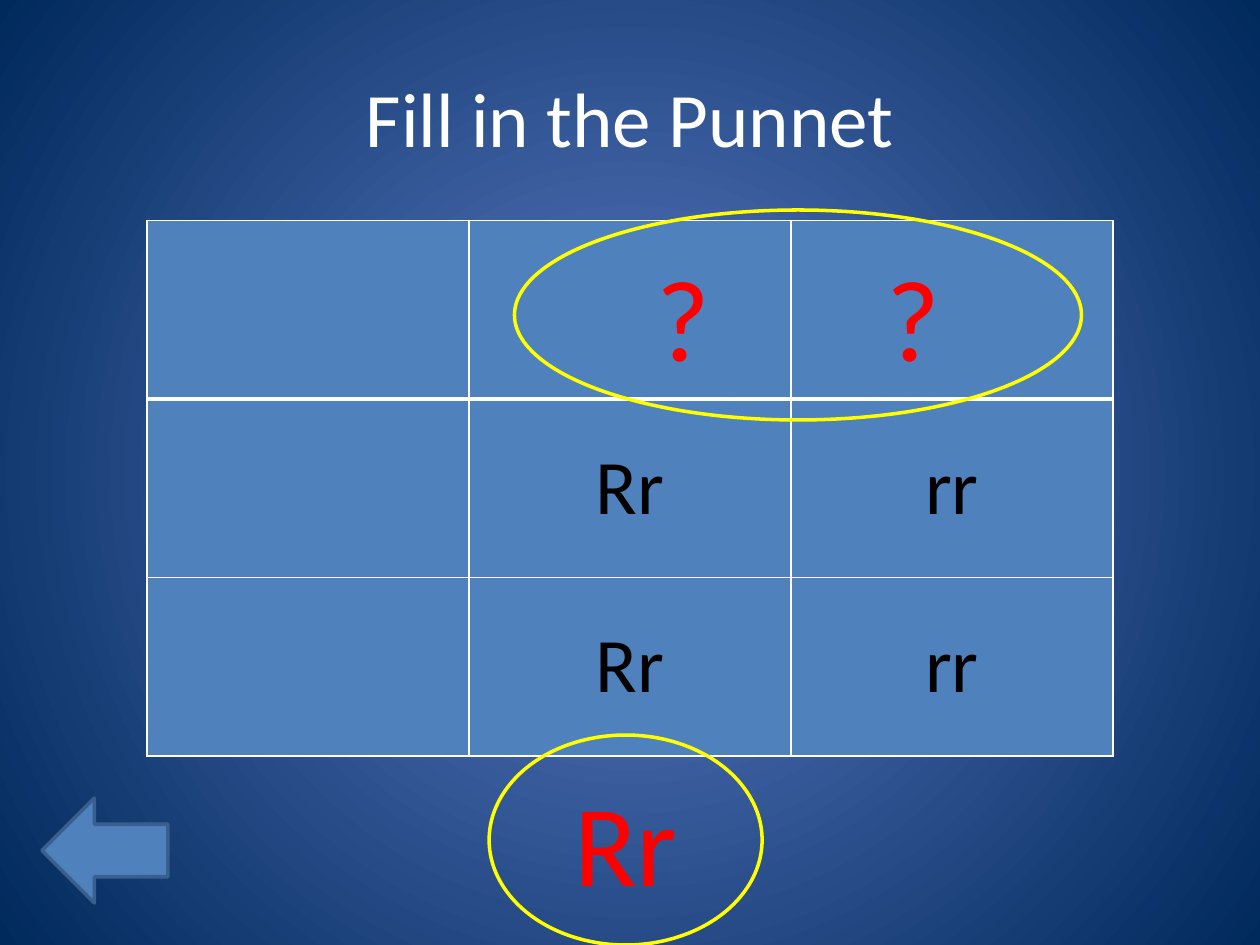
from dataclasses import dataclass

from lxml import etree
from pptx import Presentation
from pptx.dml.color import RGBColor
from pptx.enum.shapes import MSO_SHAPE as Shape
from pptx.enum.text import MSO_ANCHOR as Anchor, PP_ALIGN as Align
from pptx.oxml.ns import qn
from pptx.slide import Slide
from pptx.util import Pt

COLORS = {
    "glow": "5E7CC5",
    "edge": "00295C",
    "fill": "4F81BD",
    "arrow_line": "3A5F8C",
    "grid": "FFFFFF",
    "title": "FFFFFF",
    "genotype": "000000",
    "ring": "FFFF00",
    "answer": "FF0000",
}
GENOTYPES = [
    ["", "", ""],
    ["", "Rr", "rr"],
    ["", "Rr", "rr"],
]


def rgb(name):
    return RGBColor.from_string(COLORS[name])


@dataclass
class SlideBuilder:
    slide: Slide
    font: str = "Calibri"
    text_size: int = 44
    answer_size: int = 66
    line_width: int = 2

    def background(self, center, edge):
        fill = self.slide.background.fill
        fill.gradient()
        for stop, color in zip(fill.gradient_stops, (center, edge)):
            stop.color.rgb = rgb(color)
        gradient = self.slide.element.find(".//" + qn("a:gradFill"))
        gradient.remove(gradient.find(qn("a:lin")))
        circle = etree.SubElement(gradient, qn("a:path"), {"path": "circle"})
        sides = dict.fromkeys("ltrb", "50000")
        etree.SubElement(circle, qn("a:fillToRect"), sides)

    def set_text(self, text_frame, text, size, color, align=Align.CENTER):
        text_frame.text = text
        text_frame.vertical_anchor = Anchor.MIDDLE
        for paragraph in text_frame.paragraphs:
            paragraph.alignment = align
            for run in paragraph.runs:
                run.font.name = self.font
                run.font.size = Pt(size)
                run.font.color.rgb = rgb(color)

    def title(self, text, left, top, width, height):
        title = self.slide.shapes.title
        title.left, title.top = Pt(left), Pt(top)
        title.width, title.height = Pt(width), Pt(height)
        self.set_text(title.text_frame, text, self.text_size, "title")

    def shape(self, kind, left, top, width, height, line, fill=None):
        shape = self.slide.shapes.add_shape(
            kind, Pt(left), Pt(top), Pt(width), Pt(height))
        shape.shadow.inherit = False
        if fill:
            shape.fill.solid()
            shape.fill.fore_color.rgb = rgb(fill)
        else:
            shape.fill.background()
        shape.line.color.rgb = rgb(line)
        shape.line.width = Pt(self.line_width)
        return shape

    def ring(self, text, left, top, width, height, indent=None, tab=None):
        """Draw a circled answer; with a tab, the text starts at the indent."""
        ring = self.shape(Shape.OVAL, left, top, width, height, "ring")
        align = Align.LEFT if tab else Align.CENTER
        self.set_text(ring.text_frame, text, self.answer_size, "answer", align)
        if tab:
            ring.text_frame.margin_left = Pt(indent)
            properties = ring.text_frame.paragraphs[0]._p.get_or_add_pPr()
            tabs = etree.SubElement(properties, qn("a:tabLst"))
            etree.SubElement(tabs, qn("a:tab"), pos=str(Pt(tab)), algn="l")

    def border(self, cell, side, width):
        properties = cell._tc.get_or_add_tcPr()
        line = etree.SubElement(properties, qn("a:ln" + side), w=str(Pt(width)))
        fill = etree.SubElement(line, qn("a:solidFill"))
        etree.SubElement(fill, qn("a:srgbClr"), val=COLORS["grid"])

    def table(self, rows, left, top, width, height):
        table = self.slide.shapes.add_table(
            len(rows), len(rows[0]), Pt(left), Pt(top), Pt(width), Pt(height)).table
        for row, texts in enumerate(rows):
            for column, text in enumerate(texts):
                cell = table.cell(row, column)
                self.set_text(cell.text_frame, text, self.text_size, "genotype")
                cell.vertical_anchor = Anchor.MIDDLE
                for side in "LRTB":
                    under_header = (row, side) in ((0, "B"), (1, "T"))
                    self.border(cell, side, 3 if under_header else 1)
                cell.fill.solid()
                cell.fill.fore_color.rgb = rgb("fill")


def main():
    presentation = Presentation()
    presentation.slide_width, presentation.slide_height = Pt(720), Pt(540)
    title_only = presentation.slide_layouts[5]
    builder = SlideBuilder(presentation.slides.add_slide(title_only))

    builder.background("glow", "edge")
    builder.title("Fill in the Punnet", 36, 21.6, 648, 90)
    builder.shape(Shape.LEFT_ARROW, 24, 456, 72, 60, "arrow_line", "fill")
    builder.table(GENOTYPES, 84, 126, 552, 306)
    builder.ring("?\t?", 294, 120, 324, 120, indent=34, tab=131)
    builder.ring("Rr", 279.5, 420, 156, 120)

    presentation.save("out.pptx")


if __name__ == "__main__":
    main()
